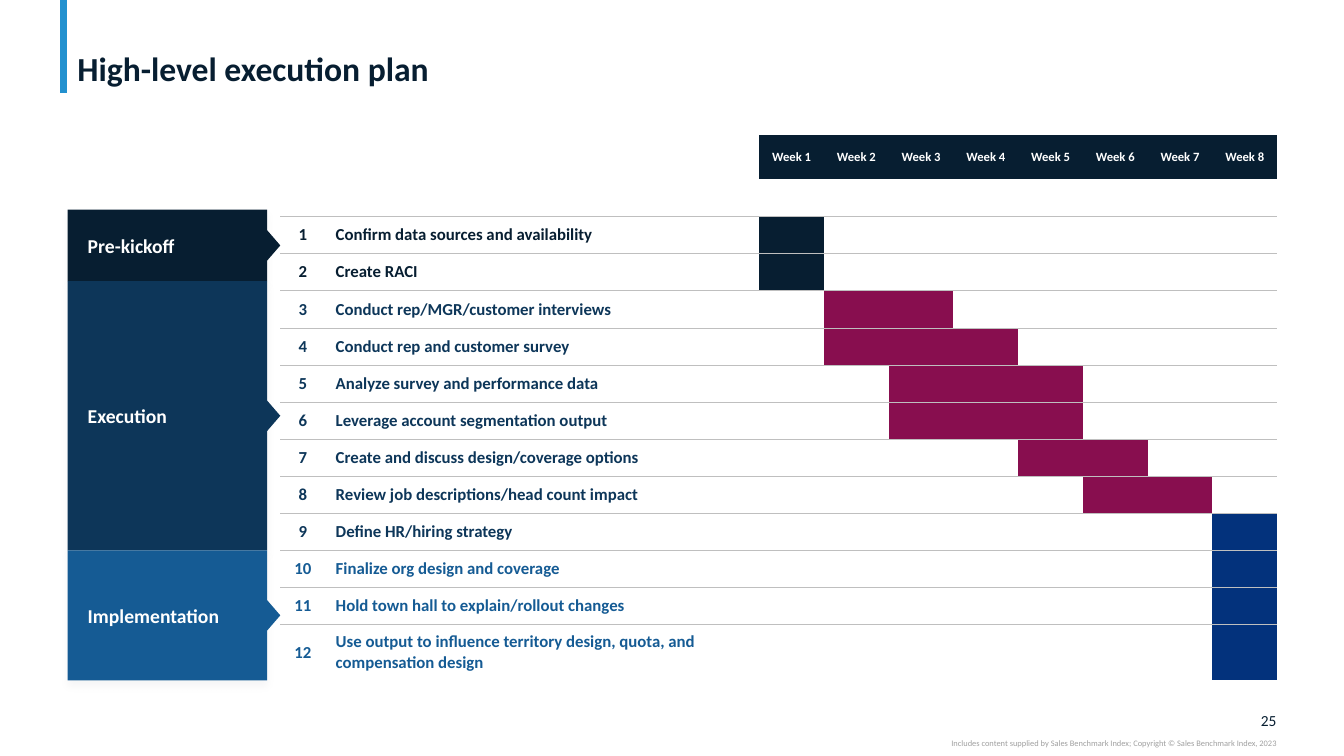
import pptx
import pptx.dml.color
import pptx.enum.shapes
import pptx.enum.text
import pptx.oxml.ns
import pptx.util
from lxml import etree

RGBColor = pptx.dml.color.RGBColor
Inches = pptx.util.Inches
Pt = pptx.util.Pt
Align = pptx.enum.text.PP_ALIGN
Anchor = pptx.enum.text.MSO_ANCHOR
Shape = pptx.enum.shapes.MSO_SHAPE
qn = pptx.oxml.ns.qn

SLIDE_WIDTH, SLIDE_HEIGHT = 13.33, 7.5
LEFT, RIGHT = 0.67, 12.66
FONT = "Calibri"
NAVY = RGBColor(0x07, 0x1E, 0x31)
DEEP_BLUE = RGBColor(0x0D, 0x36, 0x59)
MID_BLUE = RGBColor(0x15, 0x5B, 0x94)
SKY = RGBColor(0x23, 0x91, 0xCF)
ROYAL = RGBColor(0x03, 0x32, 0x7C)
WINE = RGBColor(0x88, 0x0E, 0x4F)
GREY = RGBColor(0xA0, 0xA0, 0xA0)
RULE = RGBColor(0xBF, 0xBF, 0xBF)
WHITE = RGBColor(0xFF, 0xFF, 0xFF)

NO_STYLE = "{2D5ABB26-0587-4C30-8999-92F81FD0307C}"
WEEKS = 8
HEAD_ROWS = 2  # week names, then a spacer

# task, text colour, first week, last week, bar colour
TASKS = [
    ("Confirm data sources and availability", NAVY, 1, 1, NAVY),
    ("Create RACI", NAVY, 1, 1, NAVY),
    ("Conduct rep/MGR/customer interviews", DEEP_BLUE, 2, 3, WINE),
    ("Conduct rep and customer survey", DEEP_BLUE, 2, 4, WINE),
    ("Analyze survey and performance data", DEEP_BLUE, 3, 5, WINE),
    ("Leverage account segmentation output", DEEP_BLUE, 3, 5, WINE),
    ("Create and discuss design/coverage options", DEEP_BLUE, 5, 6, WINE),
    ("Review job descriptions/head count impact", DEEP_BLUE, 6, 7, WINE),
    ("Define HR/hiring strategy", DEEP_BLUE, 8, 8, ROYAL),
    ("Finalize org design and coverage", MID_BLUE, 8, 8, ROYAL),
    ("Hold town hall to explain/rollout changes", MID_BLUE, 8, 8, ROYAL),
    ("Use output to influence territory design, quota, and compensation design",
     MID_BLUE, 8, 8, ROYAL),
]
# phase, colour, height
PHASES = [
    ("Pre-kickoff", NAVY, 0.71),
    ("Execution", DEEP_BLUE, 2.67),
    ("Implementation", MID_BLUE, 1.29),
]


def write(frame, text, size, color, bold=False, align=Align.LEFT, spacing=None):
    paragraph = frame.paragraphs[0]
    paragraph.alignment = align
    if spacing:
        paragraph.line_spacing = spacing
    run = paragraph.add_run()
    run.text = text
    run.font.name = FONT
    run.font.size = Pt(size)
    run.font.bold = bold
    run.font.color.rgb = color


def set_insets(frame, horizontal, vertical):
    frame.margin_left = frame.margin_right = Inches(horizontal)
    frame.margin_top = frame.margin_bottom = Inches(vertical)


def add_label(slide, box, text, anchor=Anchor.TOP, inset=0, **style):
    frame = slide.shapes.add_textbox(*map(Inches, box)).text_frame
    frame.word_wrap = True
    frame.vertical_anchor = anchor
    set_insets(frame, inset, 0)
    write(frame, text, **style)


def add_soft_shadow(shape):
    effects = etree.SubElement(shape._element.spPr, qn("a:effectLst"))
    shadow = etree.SubElement(effects, qn("a:outerShdw"), blurRad=str(Pt(6)),
                              dist=str(Pt(4)), dir="5400000", rotWithShape="0")
    color = etree.SubElement(shadow, qn("a:srgbClr"), val=str(NAVY))
    etree.SubElement(color, qn("a:alpha"), val="4000")


def add_title(slide, left, top, width, height):
    accent_x = Inches(left - 0.04)
    accent = slide.shapes.add_connector(
        pptx.enum.shapes.MSO_CONNECTOR.STRAIGHT,
        accent_x, 0, accent_x, Inches(top + height + 0.04))
    accent.line.color.rgb = SKY
    accent.line.width = Pt(5)
    etree.SubElement(accent._element.spPr, qn("a:effectLst"))
    add_label(slide, (left, top, width, height), "High-level execution plan",
              anchor=Anchor.BOTTOM, inset=0.1, size=24, color=NAVY, bold=True,
              spacing=0.9)


def add_footer(slide, right, top):
    add_label(slide, (right - 0.33, top, 0.33, 0.19), "25",
              anchor=Anchor.MIDDLE, size=11, color=NAVY, align=Align.RIGHT)
    add_label(slide, (right - 5.16, top + 0.27, 5.16, 0.1),
              "Includes content supplied by Sales Benchmark Index; "
              "Copyright © Sales Benchmark Index, 2023",
              size=6, color=GREY, align=Align.RIGHT)


def add_cell_rules(cell, top, bottom):
    """Draw a thin rule on the wanted sides and no line on the others."""
    properties = cell._tc.get_or_add_tcPr()
    sides = {"a:lnL": False, "a:lnR": False, "a:lnT": top, "a:lnB": bottom}
    for position, (tag, shown) in enumerate(sides.items()):
        line = etree.Element(qn(tag), w=str(Pt(0.5)))
        if shown:
            fill = etree.SubElement(line, qn("a:solidFill"))
            etree.SubElement(fill, qn("a:srgbClr"), val=str(RULE))
        else:
            etree.SubElement(line, qn("a:noFill"))
        properties.insert(position, line)


def fill_cell(cell, background=None, text="", **style):
    cell.vertical_anchor = Anchor.MIDDLE
    if background is None:
        cell.fill.background()
    else:
        cell.fill.solid()
        cell.fill.fore_color.rgb = background
    if text:
        write(cell.text_frame, text, bold=True, **style)
    else:
        # keeps an empty cell from stretching its row
        etree.SubElement(cell.text_frame.paragraphs[0]._p,
                         qn("a:endParaRPr"), sz="1200")


def add_schedule(slide, left, top, width, height):
    number_width, task_width = 0.45, 4.3
    week_width = (width - number_width - task_width) / WEEKS
    head_height, last_height = 0.44, 0.55
    row_height = (height - head_height - last_height) / len(TASKS)
    widths = [number_width, task_width] + [week_width] * WEEKS
    heights = [head_height] + [row_height] * len(TASKS) + [last_height]

    table = slide.shapes.add_table(
        len(heights), len(widths),
        *map(Inches, (left, top, width, height))).table
    table.first_row = table.horz_banding = False
    table._tbl.tblPr.find(qn("a:tableStyleId")).text = NO_STYLE
    for column, size in zip(table.columns, widths):
        column.width = Inches(size)
    for row, size in zip(table.rows, heights):
        row.height = Inches(size)

    for column in range(len(widths)):
        if column < 2:
            fill_cell(table.cell(0, column))
        else:
            fill_cell(table.cell(0, column), NAVY, f"Week {column - 1}",
                      size=9, color=WHITE, align=Align.CENTER)
        fill_cell(table.cell(1, column))
    for row, (task, ink, first, last, bar) in enumerate(TASKS, HEAD_ROWS):
        fill_cell(table.cell(row, 0), text=str(row - HEAD_ROWS + 1), size=12,
                  color=ink, align=Align.CENTER)
        fill_cell(table.cell(row, 1), text=task, size=12, color=ink)
        for week in range(1, WEEKS + 1):
            fill_cell(table.cell(row, week + 1),
                      bar if first <= week <= last else None)
    for row in range(len(heights)):
        for column in range(len(widths)):
            add_cell_rules(table.cell(row, column), top=row >= HEAD_ROWS,
                           bottom=1 <= row < len(heights) - 1)


def add_phases(slide, left, top, width):
    arrow_width, arrow_height = 0.3, 0.13
    for phase, color, height in PHASES:
        group = slide.shapes.add_group_shape()
        block = group.shapes.add_shape(
            Shape.RECTANGLE, *map(Inches, (left, top, width, height)))
        arrow = group.shapes.add_shape(
            Shape.ISOSCELES_TRIANGLE,
            Inches(left + width + (arrow_height - arrow_width) / 2),
            Inches(top + (height - arrow_height) / 2),
            Inches(arrow_width), Inches(arrow_height))
        arrow.rotation = 90
        for part in (block, arrow):
            part.fill.solid()
            part.fill.fore_color.rgb = color
            part.line.fill.background()
        arrow.shadow.inherit = False
        add_soft_shadow(block)
        frame = block.text_frame
        frame.word_wrap = True
        frame.vertical_anchor = Anchor.MIDDLE
        set_insets(frame, 0.2, 0.2)
        write(frame, phase, 14, WHITE, bold=True)
        top += height


def main():
    deck = pptx.Presentation()
    deck.slide_width, deck.slide_height = Inches(SLIDE_WIDTH), Inches(SLIDE_HEIGHT)
    slide = deck.slides.add_slide(deck.slide_layouts[6])
    add_title(slide, LEFT, 0.04, RIGHT - LEFT, 0.84)
    add_schedule(slide, 2.78, 1.34, 9.89, 5.41)
    add_phases(slide, LEFT, 2.08, 1.98)
    add_footer(slide, RIGHT, 7.05)
    deck.save("out.pptx")


if __name__ == "__main__":
    main()
